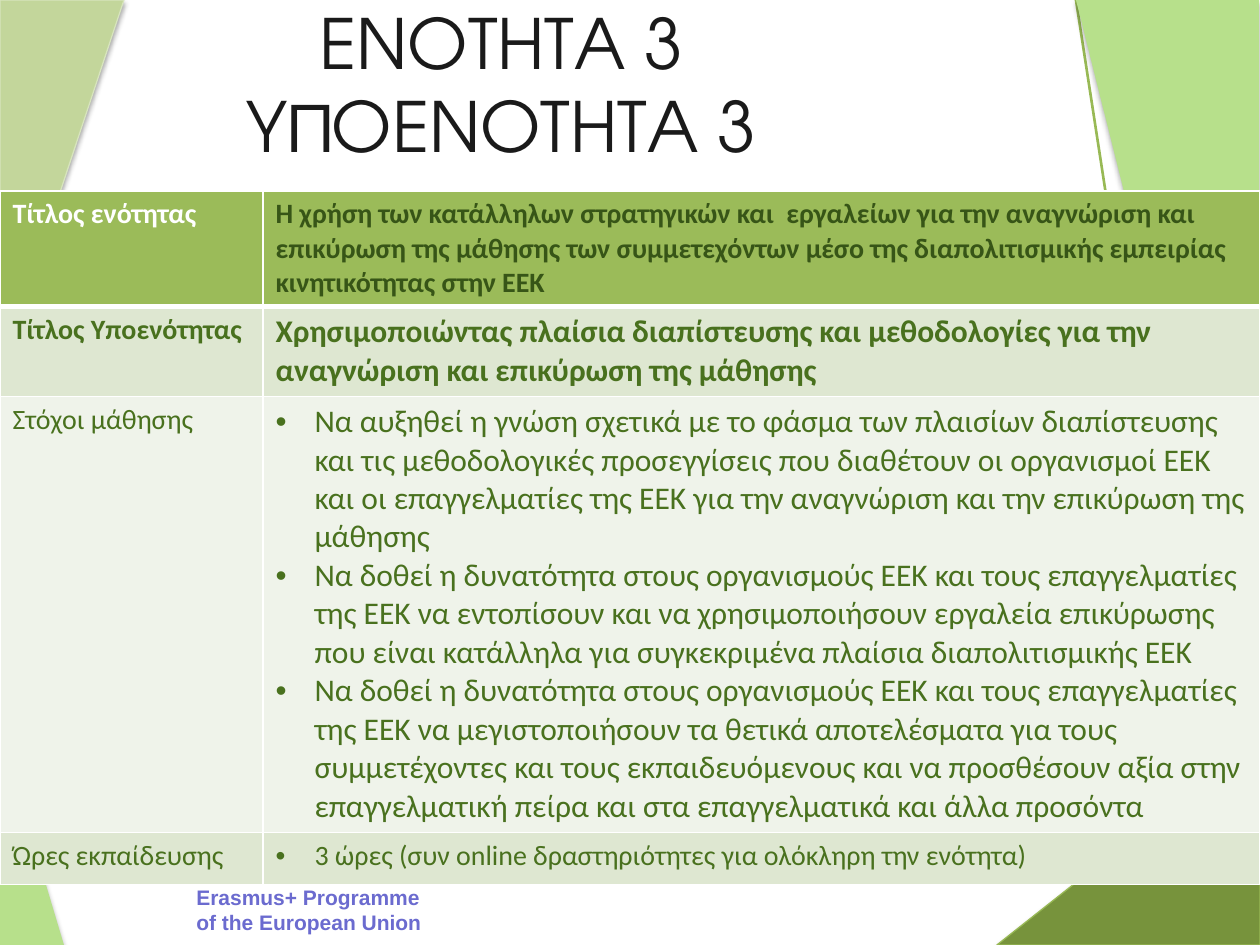
"""Builds a training unit slide with a title, corner shapes and an outline table."""
from lxml.etree import SubElement
from pptx import Presentation
from pptx.dml.color import RGBColor
from pptx.enum.shapes import MSO_CONNECTOR as CONN, MSO_SHAPE as SHAPE
from pptx.enum.text import MSO_ANCHOR as ANCHOR, MSO_AUTO_SIZE as AUTO, PP_ALIGN as ALIGN
from pptx.oxml.ns import qn
from pptx.util import Emu, Pt

WHITE, DARK, GREEN, LINE = "FFFFFF", "375517", "49711E", "98B955"
HEAD, BAND, PALE = "9BBB59", "DEE7D1", "EFF3EA"
TITLE = "ΕΝΟΤΗΤΑ 3\nΥΠΟΕΝΟΤΗΤΑ 3"
FUNDING = "Erasmus+ Programme of the European Union"
TRIANGLES = [
    {"box": (0, 731, 64, 214), "fill": "B7E08B"},
    {"box": (0, 0, 124, 373), "fill": "C3D69B", "line": "D7E4BD", "flips": ["flipV"]},
    {"box": (1076, 0, 183, 730), "fill": "B7E08B", "flips": ["flipH", "flipV"]},
    {"box": (997, 737, 263, 208), "fill": "77933C", "line": LINE, "flips": ["flipH"]},
]
EDGE = (1216, 908, 1076, 0)
TABLE_AT = (0, 191)
COLS = [263, 997]
ROWS = [
    {"height": 114, "fill": HEAD, "label": "Τίτλος ενότητας", "label_color": WHITE,
     "color": DARK, "size": 16, "bold": True, "bullet": False, "items": [
         "Η χρήση των κατάλληλων στρατηγικών και  εργαλείων για την αναγνώριση και επικύρωση "
         "της μάθησης των συμμετεχόντων μέσο της διαπολιτισμικής εμπειρίας κινητικότητας στην ΕΕΚ"]},
    {"height": 90, "fill": BAND, "label": "Τίτλος Yποενότητας", "label_color": GREEN,
     "color": GREEN, "size": 18, "bold": True, "bullet": False, "items": [
         "Χρησιμοποιώντας πλαίσια διαπίστευσης και μεθοδολογίες για την αναγνώριση και "
         "επικύρωση της μάθησης"]},
    {"height": 436, "fill": PALE, "label": "Στόχοι μάθησης", "label_color": GREEN,
     "color": GREEN, "size": 18, "bold": False, "bullet": True, "items": [
         "Να αυξηθεί η γνώση σχετικά με το φάσμα των πλαισίων διαπίστευσης και τις μεθοδολογικές "
         "προσεγγίσεις που διαθέτουν οι οργανισμοί ΕΕΚ και οι επαγγελματίες της ΕΕΚ για την "
         "αναγνώριση και την επικύρωση της μάθησης",
         "Να δοθεί η δυνατότητα στους οργανισμούς ΕΕΚ και τους επαγγελματίες της ΕΕΚ να εντοπίσουν "
         "και να χρησιμοποιήσουν εργαλεία επικύρωσης που είναι κατάλληλα για συγκεκριμένα πλαίσια "
         "διαπολιτισμικής ΕΕΚ",
         "Να δοθεί η δυνατότητα στους οργανισμούς ΕΕΚ και τους επαγγελματίες της ΕΕΚ να "
         "μεγιστοποιήσουν τα θετικά αποτελέσματα για τους συμμετέχοντες και τους εκπαιδευόμενους "
         "και να προσθέσουν αξία στην επαγγελματική πείρα και στα επαγγελματικά και άλλα προσόντα"]},
    {"height": 52, "fill": BAND, "label": "Ώρες εκπαίδευσης", "label_color": GREEN,
     "color": GREEN, "size": 16, "bold": False, "bullet": True, "items": [
         "3 ώρες (συν online δραστηριότητες για ολόκληρη την ενότητα)"]},
]


def px(n):
    return Emu(round(n * 914400 / 126))


def rgb(color):
    return RGBColor.from_string(color)


def write(tf, items, size, color, font="Calibri", bold=False, align=ALIGN.LEFT, bullet=False):
    tf.word_wrap = True
    for i, text in enumerate(items):
        p = tf.paragraphs[0] if i == 0 else tf.add_paragraph()
        p.text = text
        p.alignment = align
        if bullet:
            pPr = p._p.get_or_add_pPr()
            pPr.set("marL", str(px(39)))
            pPr.set("indent", str(px(-39)))
            SubElement(pPr, qn("a:buFont"), typeface="Arial")
            SubElement(pPr, qn("a:buChar"), char="•")
        for br in p._p.findall(qn("a:br")):
            SubElement(br, qn("a:rPr"), sz=str(round(size * 100)))
        for r in p.runs:
            r.font.name, r.font.size, r.font.bold = font, Pt(size), bold
            r.font.color.rgb = rgb(color)


def add_triangle(shapes, box, fill, line=None, flips=()):
    sp = shapes.add_shape(SHAPE.RIGHT_TRIANGLE, *map(px, box))
    sp.fill.solid()
    sp.fill.fore_color.rgb = rgb(fill)
    if line:
        sp.line.color.rgb = rgb(line)
        sp.line.width = Pt(0.75)
    else:
        sp.line.fill.background()
    for flip in flips:
        sp._element.spPr.find(qn("a:xfrm")).set(flip, "1")
    sp.shadow.inherit = False
    effects = sp._element.spPr.find(qn("a:effectLst"))
    shadow = SubElement(effects, qn("a:outerShdw"), blurRad=str(Pt(3.1)), dist=str(Pt(1.8)),
                        dir="5400000", rotWithShape="0")
    SubElement(SubElement(shadow, qn("a:srgbClr"), val="000000"), qn("a:alpha"), val="35000")


def add_edge(shapes):
    line = shapes.add_connector(CONN.STRAIGHT, *map(px, EDGE))
    line.line.color.rgb = rgb(LINE)
    line.line.width = Pt(1.5)
    SubElement(line._element.spPr, qn("a:effectLst"))


def style_cell(cell, fill, top, bottom):
    cell.fill.solid()
    cell.fill.fore_color.rgb = rgb(fill)
    tcPr = cell._tc.get_or_add_tcPr()
    for i, (side, width) in enumerate({"L": 1, "R": 1, "T": top, "B": bottom}.items()):
        ln = SubElement(tcPr, qn(f"a:ln{side}"), w=str(Pt(width)))
        SubElement(SubElement(ln, qn("a:solidFill")), qn("a:srgbClr"), val=WHITE)
        tcPr.insert(i, ln)


def add_outline(shapes):
    height = sum(row["height"] for row in ROWS)
    table = shapes.add_table(len(ROWS), len(COLS), *map(px, (*TABLE_AT, sum(COLS), height))).table
    for col, width in zip(table.columns, COLS):
        col.width = px(width)
    for i, row in enumerate(ROWS):
        table.rows[i].height = px(row["height"])
        label, body = table.cell(i, 0), table.cell(i, 1)
        for cell in (label, body):
            style_cell(cell, row["fill"], top=3 if i == 1 else 1, bottom=3 if i == 0 else 1)
        write(label.text_frame, [row["label"]], 16, row["label_color"], bold=row["bold"])
        write(body.text_frame, row["items"], row["size"], row["color"],
              bold=row["bold"], bullet=row["bullet"])


def main():
    prs = Presentation()
    prs.slide_width, prs.slide_height = px(1260), px(945)
    s = prs.slides.add_slide(prs.slide_layouts[5])
    funding = s.shapes.add_textbox(*map(px, (184, 878, 252, 64)))
    write(funding.text_frame, [FUNDING], 12, "6B6BCF", font="Arial", bold=True)
    add_triangle(s.shapes, **TRIANGLES[0])
    add_triangle(s.shapes, **TRIANGLES[1])
    add_edge(s.shapes)
    for triangle in TRIANGLES[2:]:
        add_triangle(s.shapes, **triangle)
    title = s.shapes.title
    title.left, title.top, title.width, title.height = map(px, (94, 4, 815, 158))
    title.text_frame.auto_size = AUTO.NONE
    title.text_frame.vertical_anchor = ANCHOR.MIDDLE
    write(title.text_frame, [TITLE], 39.6, "1A1A1A", font="TeX Gyre Adventor", align=ALIGN.CENTER)
    s.shapes._spTree.append(title._element)
    add_outline(s.shapes)
    prs.save("out.pptx")


if __name__ == "__main__":
    main()
